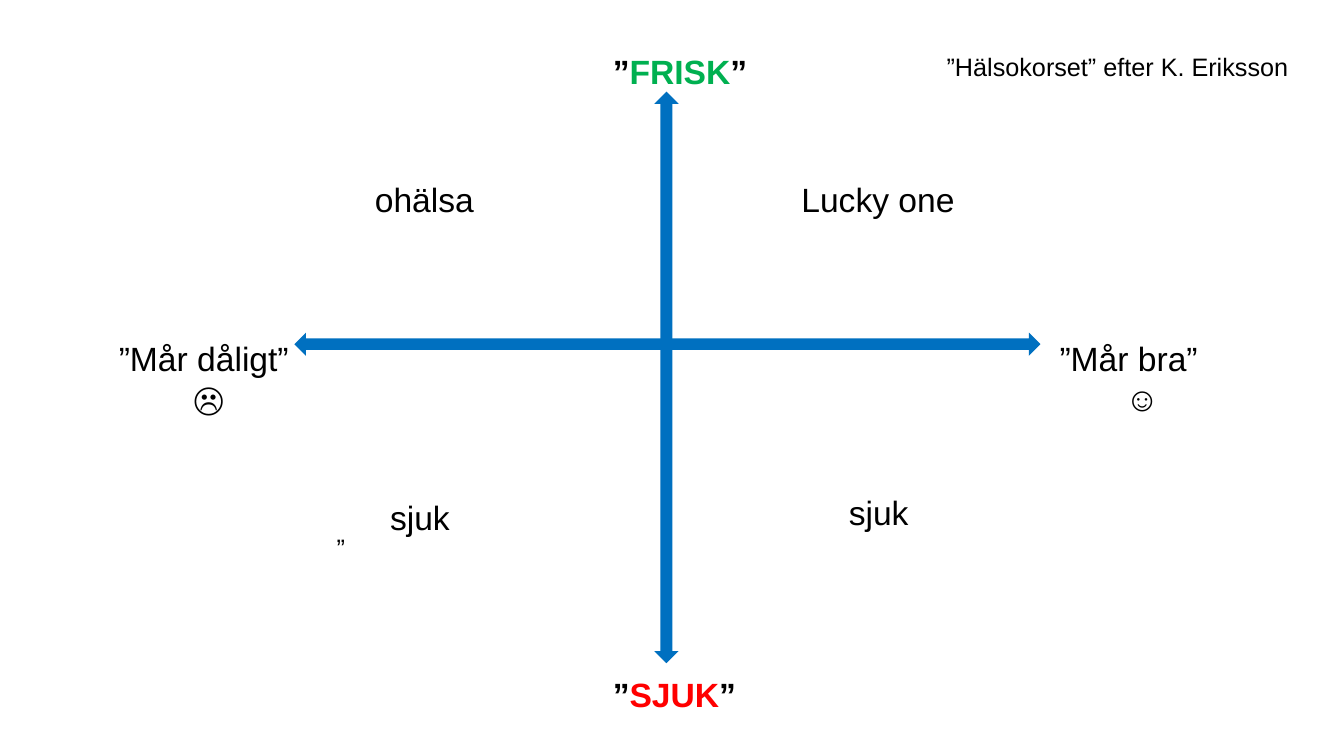
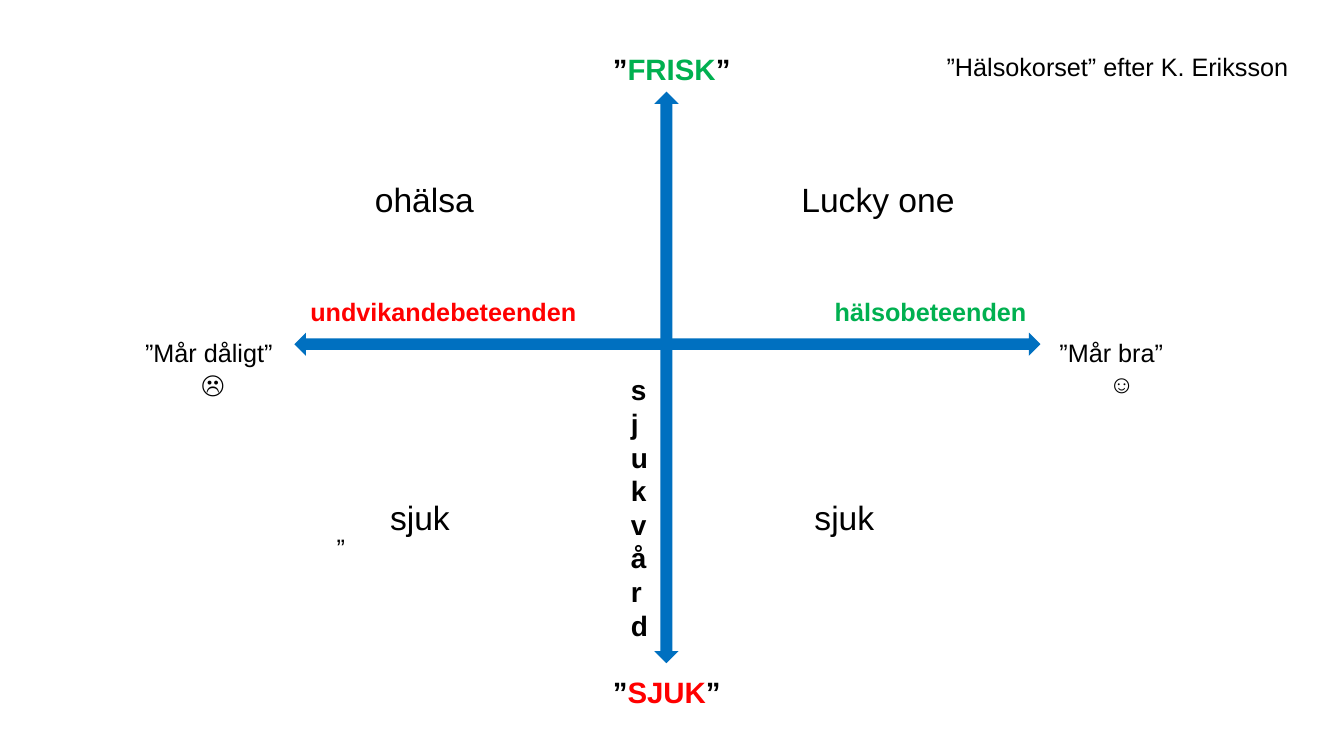
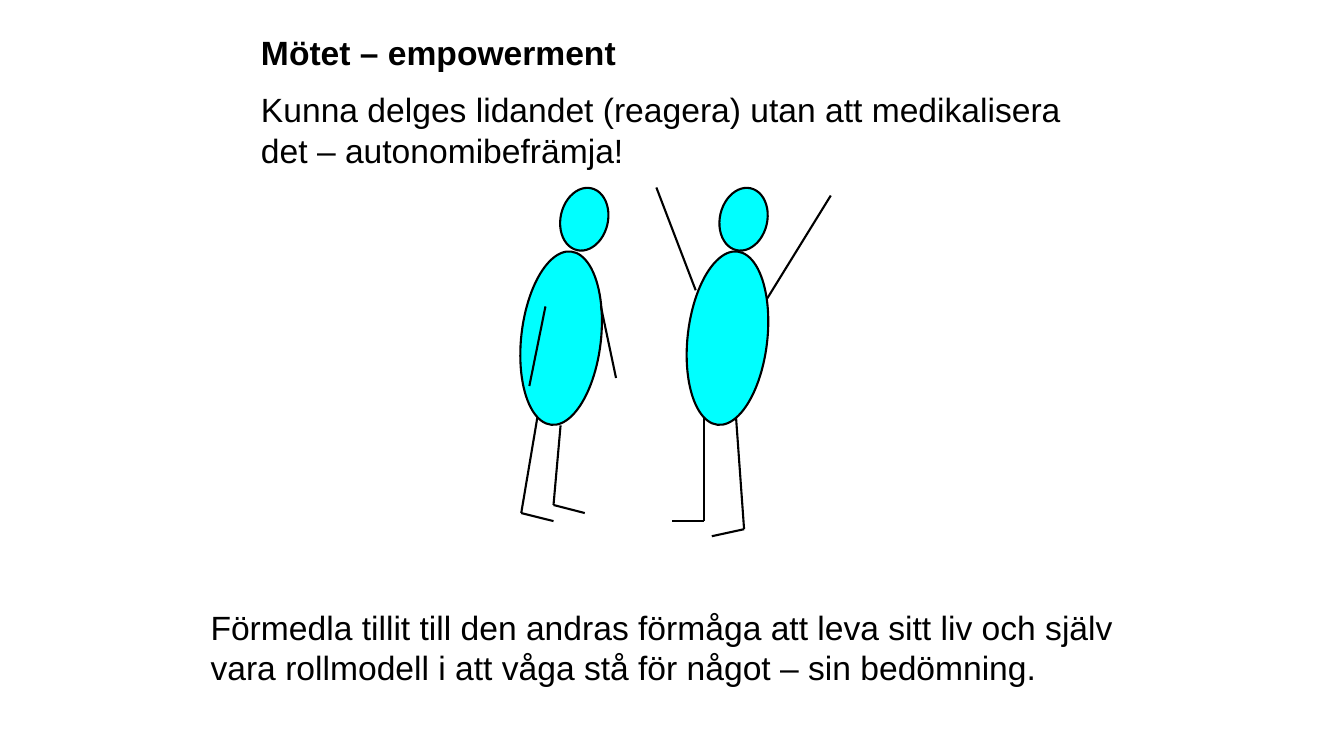
from dataclasses import dataclass

from lxml import etree
from pptx import Presentation
from pptx.dml.color import RGBColor
from pptx.enum import shapes, text
from pptx.oxml import ns
from pptx.util import Inches, Pt

COLORS = {
    "text": "000000",
    "axis": "0070C0",
    "healthy": "00B050",
    "sick": "FF0000",
    "figure": "00FFFF",
}
FONT = "Arial"
AXES = (
    (shapes.MSO_SHAPE.UP_DOWN_ARROW, (6.49, 0.91, 0.24, 5.67)),
    (shapes.MSO_SHAPE.LEFT_RIGHT_ARROW, (2.92, 3.3, 7.4, 0.23)),
)
Box = tuple[float, float, float, float]
Point = tuple[float, float]


@dataclass(frozen=True)
class Label:
    words: str
    box: Box
    size: float = 24
    color: str = "text"
    bold: bool = False
    wrap: bool = False


@dataclass(frozen=True)
class Pole:
    """A quoted end of the vertical axis."""
    word: str
    color: str
    top: float
    width: float


@dataclass(frozen=True)
class Mood:
    """An end of the horizontal axis, with a face under the words."""
    words: str
    face: str
    face_indent: float
    box: Box


@dataclass(frozen=True)
class Person:
    head: Point
    body: Point
    limbs: tuple[tuple[Point, ...], ...]


CROSS_LABELS = (
    Label("”Hälsokorset” efter K. Eriksson", (9.29, 0.46, 3.71, 0.4), 18),
    Label("ohälsa", (3.62, 1.73, 1.2, 0.5)),
    Label("Lucky one", (7.85, 1.73, 1.74, 0.5)),
    Label("sjuk", (3.77, 4.88, 0.8, 0.5)),
)
BEHAVIOUR_LABELS = (
    Label("undvikandebeteenden", (2.98, 2.89, 2.87, 0.4), 18, "sick", True),
    Label("hälsobeteenden", (8.18, 2.89, 2.12, 0.4), 18, "healthy", True),
    Label("\n".join("sjukvård"), (6.16, 3.65, 0.37, 2.79), 20, bold=True),
)
PEOPLE = (
    Person((5.56, 1.86), (5.17, 2.49), (
        ((5.33, 4.14), (5.17, 5.09), (5.49, 5.17)),
        ((5.56, 4.22), (5.49, 5.01), (5.8, 5.09)),
        ((5.96, 3.04), (6.11, 3.75)),
        ((5.41, 3.04), (5.25, 3.83)),
    )),
    Person((7.14, 1.86), (6.82, 2.49), (
        ((8.24, 1.94), (7.61, 2.96)),
        ((7.3, 4.14), (7.38, 5.25), (7.06, 5.32)),
        ((6.98, 4.14), (6.98, 5.17), (6.67, 5.17)),
        ((6.51, 1.86), (6.9, 2.88)),
    )),
)


def rgb(name: str) -> RGBColor:
    return RGBColor.from_string(COLORS[name])


def style_run(run, size: float, color: str = "text", bold: bool = False) -> None:
    run.font.name = FONT
    run.font.size = Pt(size)
    run.font.bold = bold
    run.font.color.rgb = rgb(color)


def add_label(slide, label: Label):
    """Add a text box and return its text frame."""
    frame = slide.shapes.add_textbox(*map(Inches, label.box)).text_frame
    frame.word_wrap = label.wrap
    frame.auto_size = (text.MSO_AUTO_SIZE.NONE if label.wrap
                       else text.MSO_AUTO_SIZE.SHAPE_TO_FIT_TEXT)
    frame.text = label.words
    for paragraph in frame.paragraphs:
        for run in paragraph.runs:
            style_run(run, label.size, label.color, label.bold)
    return frame


def add_pole(slide, pole: Pole, size: float) -> None:
    box = (5.98, pole.top, pole.width, 0.5 * size / 24)
    paragraph = add_label(slide, Label("”", box, size, bold=True)).paragraphs[0]
    for words, color in ((pole.word, pole.color), ("”", "text")):
        run = paragraph.add_run()
        run.text = words
        style_run(run, size, color, True)


def add_mood(slide, mood: Mood, size: float) -> None:
    label = Label(f"{mood.words}\n{mood.face}", mood.box, size)
    face = add_label(slide, label).paragraphs[1]
    properties = face._p.get_or_add_pPr()
    properties.set("marL", str(Inches(mood.face_indent)))
    properties.set("indent", "0")


def add_filled(parent, kind, box: Box, color: str):
    shape = parent.shapes.add_shape(kind, *map(Inches, box))
    shape.shadow.inherit = False
    shape.fill.solid()
    shape.fill.fore_color.rgb = rgb(color)
    shape.line.fill.background()
    return shape


def add_oval(group, corner: Point, size: Point, rotation: float) -> None:
    oval = add_filled(group, shapes.MSO_SHAPE.OVAL, (*corner, *size), "figure")
    oval.rotation = rotation
    oval.line.color.rgb = rgb("text")
    oval.line.width = Pt(1.5)


def add_line(group, start: Point, end: Point) -> None:
    line = group.shapes.add_connector(
        shapes.MSO_CONNECTOR.STRAIGHT, *map(Inches, (*start, *end)))
    line.line.color.rgb = rgb("text")
    line.line.width = Pt(1.5)
    etree.SubElement(line._element.spPr, ns.qn("a:effectLst"))


def add_person(slide, person: Person) -> None:
    group = slide.shapes.add_group_shape()
    add_oval(group, person.body, (0.79, 1.73), 6.6)
    add_oval(group, person.head, (0.47, 0.63), 13)
    for limb in person.limbs:
        for start, end in zip(limb, limb[1:]):
            add_line(group, start, end)


def add_blank(deck):
    return deck.slides.add_slide(deck.slide_layouts[6])


def add_health_cross(deck, poles: tuple[Pole, ...], pole_size: float,
                     moods: tuple[Mood, ...], mood_size: float,
                     labels: tuple[Label, ...]) -> None:
    slide = add_blank(deck)
    for kind, box in AXES:
        add_filled(slide, kind, box, "axis")
    for pole in poles:
        add_pole(slide, pole, pole_size)
    for mood in moods:
        add_mood(slide, mood, mood_size)
    quote = add_label(slide, Label("”", (3.24, 4.02, 3.01, 1.61), 18, wrap=True))
    quote.vertical_anchor = text.MSO_ANCHOR.BOTTOM
    for label in CROSS_LABELS + labels:
        add_label(slide, label)


def add_meeting(deck) -> None:
    slide = add_blank(deck)
    for person in PEOPLE:
        add_person(slide, person)
    heading = add_label(slide, Label(
        "Mötet – empowerment\n"
        "Kunna delges lidandet (reagera) utan att medikalisera det – autonomibefrämja!",
        (2.49, 0.27, 8.35, 1.52), wrap=True))
    heading.paragraphs[0].runs[0].font.bold = True
    heading.paragraphs[1].space_before = Pt(12)
    add_label(slide, Label(
        "Förmedla tillit till den andras förmåga att leva sitt liv och själv\n"
        "vara rollmodell i att våga stå för något – sin bedömning.",
        (1.99, 5.97, 11.57, 0.91), wrap=True))


def main() -> None:
    deck = Presentation()
    deck.slide_width, deck.slide_height = Inches(13.33), Inches(7.5)
    add_health_cross(
        deck,
        (Pole("FRISK", "healthy", 0.46, 1.55), Pole("SJUK", "sick", 6.64, 1.44)), 24,
        (Mood("”Mår dåligt”", "☹", 0.74, (1.08, 3.3, 1.91, 0.91)),
         Mood("”Mår bra”", "☺", 0.65, (10.41, 3.3, 1.59, 0.91))), 24,
        (Label("sjuk", (8.32, 4.83, 0.8, 0.5)),))
    add_health_cross(
        deck,
        (Pole("FRISK", "healthy", 0.46, 1.38), Pole("SJUK", "sick", 6.64, 1.28)), 21,
        (Mood("”Mår dåligt”", "☹", 0.56, (1.34, 3.3, 1.48, 0.71)),
         Mood("”Mår bra”", "☺", 0.49, (10.41, 3.3, 1.24, 0.71))), 18,
        (Label("sjuk", (7.98, 4.88, 0.8, 0.5)), *BEHAVIOUR_LABELS))
    add_meeting(deck)
    deck.save("out.pptx")


if __name__ == "__main__":
    main()
